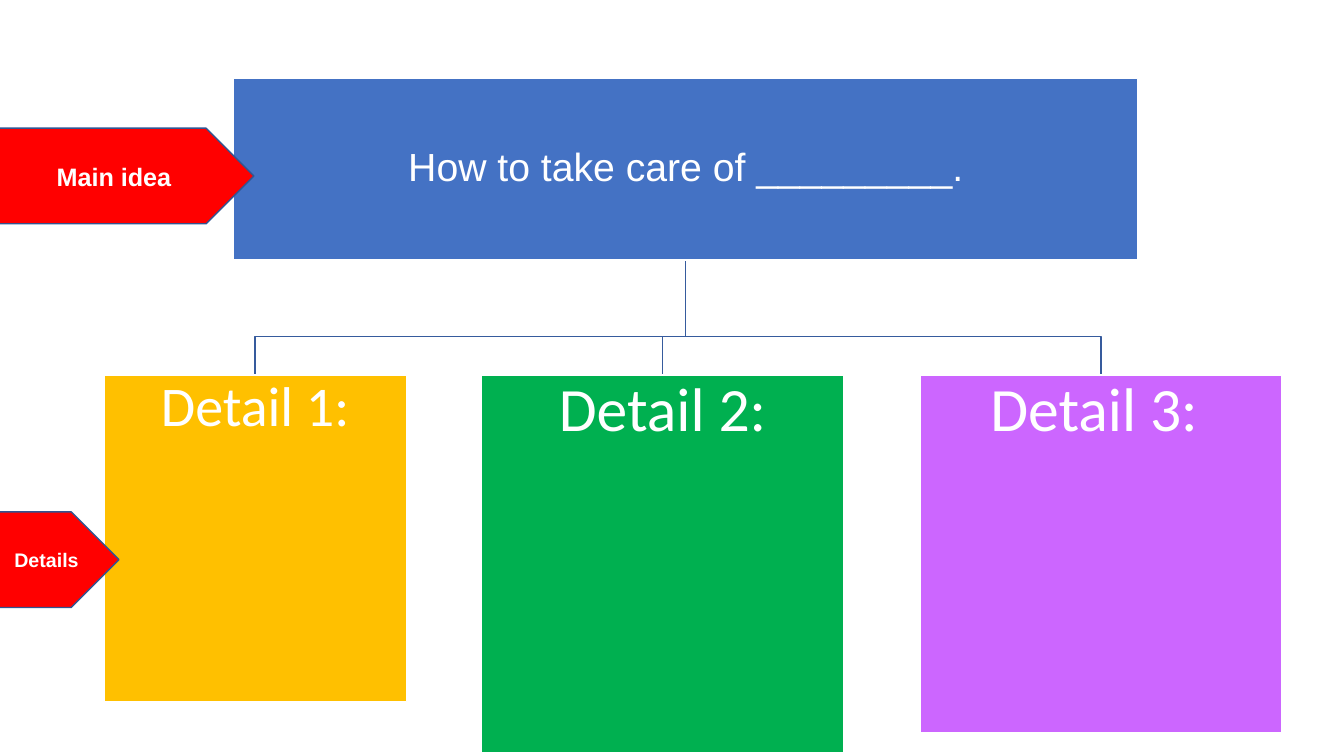
import pptx
import pptx.util
import pptx.dml.color
import pptx.enum.shapes
import pptx.enum.text

Cm, Pt = pptx.util.Cm, pptx.util.Pt
RGBColor = pptx.dml.color.RGBColor
Kind = pptx.enum.shapes.MSO_SHAPE
Anchor = pptx.enum.text.MSO_ANCHOR
Align = pptx.enum.text.PP_ALIGN

WHITE = RGBColor(0xFF, 0xFF, 0xFF)
BLUE = RGBColor(0x44, 0x72, 0xC4)
GOLD = RGBColor(0xFF, 0xC0, 0x00)
GREEN = RGBColor(0x00, 0xB0, 0x50)
PURPLE = RGBColor(0xCC, 0x66, 0xFF)
RED = RGBColor(0xFF, 0x00, 0x00)
LINK = RGBColor(0x36, 0x5B, 0x9D)
EDGE = RGBColor(0x32, 0x54, 0x91)

# Content, lengths in centimetres
MAIN = ("How to take care of _________.", 5.89, 1.98, 22.78, 4.57)
ROW = 9.45    # top of the detail boxes
BEND = 8.48   # height at which the links turn
DETAILS = [   # text, left, width, height, size, fill
    ("Detail 1:", 2.62, 7.62, 8.23, 40, GOLD),
    ("Detail 2:", 12.14, 9.12, 9.53, 44, GREEN),
    ("Detail 3: ", 23.19, 9.12, 9.02, 44, PURPLE),
]
TAGS = [      # text, top, width, size
    ("Main idea", 3.23, 6.45, 18),
    ("Details", 12.9, 3.05, 14),
]
TAG_LEFT, TAG_HIGH = -0.05, 2.41

deck = pptx.Presentation()
deck.slide_width, deck.slide_height = Cm(33.87), Cm(19.05)
slide = deck.slides.add_slide(deck.slide_layouts[6])


def add_box(kind, text, area, fill, line, size, font="Arial",
            anchor=Anchor.MIDDLE, inset=None, bold=False, space=1.0):
    box = slide.shapes.add_shape(kind, *map(Cm, area))
    box.shadow.inherit = False
    box.fill.solid()
    box.fill.fore_color.rgb = fill
    box.line.color.rgb = line
    box.line.width = Pt(1)
    frame = box.text_frame
    frame.word_wrap = True
    frame.vertical_anchor = anchor
    if inset is not None:
        frame.margin_left = frame.margin_right = Cm(inset)
        frame.margin_top = frame.margin_bottom = Cm(inset)
    para = frame.paragraphs[0]
    para.text = text
    para.alignment = Align.CENTER
    para.line_spacing = space
    para.font.name = font
    para.font.size = Pt(size)
    para.font.bold = bold
    para.font.color.rgb = WHITE


def add_link(start, end):
    (x1, y1), (x2, y2) = start, end
    path = slide.shapes.build_freeform(Cm(x1), Cm(y1))
    turns = [(x1, BEND), (x2, BEND), (x2, y2)]
    path.add_line_segments([(Cm(x), Cm(y)) for x, y in turns], close=False)
    link = path.convert_to_shape()
    link.shadow.inherit = False
    link.fill.background()
    link.line.color.rgb = LINK
    link.line.width = Pt(1)


# Links from the main idea to each detail
title, left, top, wide, high = MAIN
root = (left + wide / 2, top + high)
for _, x, w, *_ in reversed(DETAILS):
    add_link(root, (x + w / 2, ROW))

# Main idea and details
add_box(Kind.RECTANGLE, title, MAIN[1:], BLUE, WHITE, 28,
        inset=0.05, space=0.9)
for text, x, w, h, size, fill in DETAILS:
    add_box(Kind.RECTANGLE, text, (x, ROW, w, h), fill, WHITE, size,
            font="Calibri", anchor=Anchor.TOP, inset=0.08, space=0.9)

# Red tags on the left edge
for text, y, w, size in TAGS:
    add_box(Kind.PENTAGON, text, (TAG_LEFT, y, w, TAG_HIGH), RED, EDGE, size,
            bold=True)

deck.save("out.pptx")
